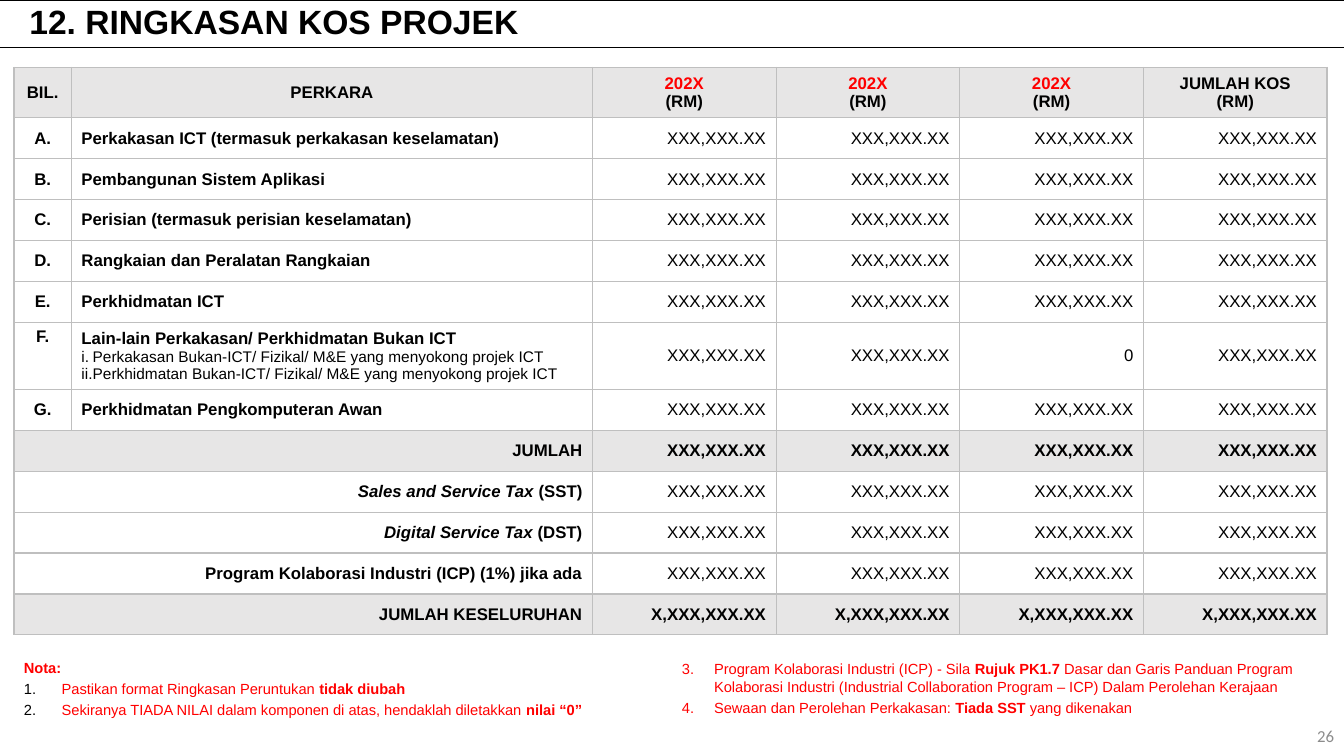
"""Build the project cost summary slide with its cost table and notes."""
from dataclasses import dataclass

from lxml.etree import SubElement
from pptx import Presentation
from pptx.dml.color import RGBColor
from pptx.enum.shapes import MSO_SHAPE
from pptx.enum.text import MSO_ANCHOR, PP_ALIGN
from pptx.oxml.ns import qn
from pptx.util import Pt


@dataclass(frozen=True)
class Theme:
    font: str = "Arial"
    number_font: str = "Calibri"
    black: str = "000000"
    red: str = "FF0000"
    gray: str = "8C8C8C"
    border: str = "BFBFBF"
    band: str = "E7E6E6"
    title_size: float = 24
    body_size: float = 12
    detail_size: float = 11
    note_size: float = 10.5


theme = Theme()


def write(paragraph, pieces, size, color=theme.black, bold=False, alignment=PP_ALIGN.LEFT):
    """Write alternating plain and emphasised pieces; emphasis is italic in bold text."""
    paragraph.alignment = alignment
    font = paragraph.font
    font.name, font.size, font.bold = theme.font, Pt(size), bold
    font.color.rgb = RGBColor.from_string(color)
    for index, piece in enumerate(pieces):
        if not piece:
            continue
        run = paragraph.add_run()
        run.text = piece
        run.font.name, run.font.size = theme.font, Pt(size)
        run.font.color.rgb = RGBColor.from_string(color)
        emphasised = index % 2 == 1
        run.font.bold = bold or emphasised
        run.font.italic = bold and emphasised


def number(paragraph, scheme, start, margin, color):
    """Give a paragraph an automatic number with a hanging indent."""
    properties = paragraph._p.get_or_add_pPr()
    properties.set("marL", str(Pt(margin)))
    properties.set("indent", str(-Pt(margin)))
    SubElement(SubElement(properties, qn("a:buClr")), qn("a:srgbClr"), val=color)
    SubElement(properties, qn("a:buAutoNum"), type=scheme, startAt=str(start))


presentation = Presentation()
presentation.slide_width, presentation.slide_height = Pt(960), Pt(540)
slide = presentation.slides.add_slide(presentation.slide_layouts[6])

title = slide.shapes.add_shape(MSO_SHAPE.RECTANGLE, Pt(0), Pt(0), Pt(961), Pt(34))
title.shadow.inherit = False
title.fill.background()
title.line.color.rgb = RGBColor.from_string(theme.black)
title.line.width = Pt(0.75)
title.text_frame.word_wrap = True
title.text_frame.vertical_anchor = MSO_ANCHOR.MIDDLE
title.text_frame.margin_left = Pt(21)
title_paragraph = title.text_frame.paragraphs[0]
title_paragraph.line_spacing = 0.9
write(title_paragraph, ["12. RINGKASAN KOS PROJEK"], theme.title_size, bold=True)

page_number = slide.shapes.add_textbox(Pt(744), Pt(511.2), Pt(216), Pt(28.8))
page_number.text_frame.word_wrap = True
page_number.text_frame.vertical_anchor = MSO_ANCHOR.MIDDLE
page_paragraph = page_number.text_frame.paragraphs[0]
page_paragraph.text = "26"
page_paragraph.alignment = PP_ALIGN.RIGHT
page_paragraph.font.name = theme.number_font
page_paragraph.font.size = Pt(theme.body_size)
page_paragraph.font.color.rgb = RGBColor.from_string(theme.gray)

amount, grand_amount = "XXX,XXX.XX", "X,XXX,XXX.XX"
headings = [["BIL."], ["PERKARA"], *[["202X", "(RM)"]] * 3, ["JUMLAH KOS", "(RM)"]]
items = [
    "Perkakasan ICT (termasuk perkakasan keselamatan)",
    "Pembangunan Sistem Aplikasi",
    "Perisian (termasuk perisian keselamatan)",
    "Rangkaian dan Peralatan Rangkaian",
    "Perkhidmatan ICT",
    "Lain-lain Perkakasan/ Perkhidmatan Bukan ICT",
    "Perkhidmatan Pengkomputeran Awan",
]
other_details = [
    "Perkakasan Bukan-ICT/ Fizikal/ M&E yang menyokong projek ICT",
    "Perkhidmatan Bukan-ICT/ Fizikal/ M&E yang menyokong projek ICT",
]
totals = [
    ["JUMLAH"],
    ["", "Sales and Service Tax ", "(SST)"],
    ["", "Digital Service Tax ", "(DST)"],
    ["Program Kolaborasi Industri (ICP) (1%) jika ada"],
    ["JUMLAH KESELURUHAN"],
]
column_widths = [41, 372.2] + [131.2] * 4
other_row, first_total = 6, len(items) + 1
row_heights = [34] + [29.2] * (len(items) + len(totals))
row_heights[other_row] = 45
last_row = len(row_heights) - 1
band_rows = {0, first_total, last_row}

table = slide.shapes.add_table(
    len(row_heights), len(column_widths), Pt(10), Pt(48.2), Pt(sum(column_widths)), Pt(sum(row_heights))
).table
table.first_row = table.horz_banding = False
for column, width in zip(table.columns, column_widths):
    column.width = Pt(width)

for row_index, height in enumerate(row_heights):
    table.rows[row_index].height = Pt(height)
    is_total = row_index >= first_total
    for column_index in range(len(column_widths)):
        cell = table.cell(row_index, column_index)
        cell.vertical_anchor = MSO_ANCHOR.MIDDLE
        open_side = {0: "lnR", 1: "lnL"}.get(column_index) if is_total else None
        for side in ("lnL", "lnR", "lnT", "lnB"):
            edge = SubElement(cell._tc.get_or_add_tcPr(), qn(f"a:{side}"), w=str(Pt(1)))
            if side == open_side:
                SubElement(edge, qn("a:noFill"))
            else:
                SubElement(SubElement(edge, qn("a:solidFill")), qn("a:srgbClr"), val=theme.border)
        if row_index in band_rows:
            cell.fill.solid()
            cell.fill.fore_color.rgb = RGBColor.from_string(theme.band)
        else:
            cell.fill.background()

        pieces, bold, alignment = [], True, PP_ALIGN.RIGHT
        if row_index == 0:
            pieces, alignment = headings[column_index][:1], PP_ALIGN.CENTER
        elif column_index > 1:
            pieces, bold = [grand_amount if row_index == last_row else amount], row_index in band_rows
            if (row_index, column_index) == (other_row, 4):
                pieces = ["0"]
        elif is_total and column_index == 1:
            pieces = totals[row_index - first_total]
        elif column_index == 1:
            pieces, alignment = [items[row_index - 1]], PP_ALIGN.LEFT
        elif not is_total:
            pieces, alignment = ["ABCDEFG"[row_index - 1] + "."], PP_ALIGN.CENTER
        color = theme.red if pieces == ["202X"] else theme.black
        write(cell.text_frame.paragraphs[0], pieces, theme.body_size, color, bold, alignment)

for column_index, lines in enumerate(headings):
    for line in lines[1:]:
        paragraph = table.cell(0, column_index).text_frame.add_paragraph()
        write(paragraph, [line], theme.body_size, bold=True, alignment=PP_ALIGN.CENTER)

table.cell(other_row, 0).vertical_anchor = MSO_ANCHOR.TOP
for detail in other_details:
    paragraph = table.cell(other_row, 1).text_frame.add_paragraph()
    number(paragraph, "romanLcPeriod", 1, 8, theme.black)
    write(paragraph, [detail], theme.detail_size, alignment=PP_ALIGN.JUSTIFY)

format_notes = [
    ["Pastikan format Ringkasan Peruntukan ", "tidak diubah"],
    ["Sekiranya TIADA NILAI dalam komponen di atas, hendaklah diletakkan ", "nilai “0”"],
]
tax_notes = [
    [
        "Program Kolaborasi Industri (ICP) - Sila ",
        "Rujuk PK1.7 ",
        "Dasar dan Garis Panduan Program Kolaborasi Industri "
        "(Industrial Collaboration Program – ICP) Dalam Perolehan Kerajaan",
    ],
    ["Sewaan dan Perolehan Perkakasan: ", "Tiada SST ", "yang dikenakan"],
]
notes_group = slide.shapes.add_group_shape()
for left, top, width, heading, notes, start, margin, number_color in [
    (10, 467.3, 470, "Nota:", format_notes, 1, 27, theme.black),
    (480, 468, 462.2, None, tax_notes, 3, 23, theme.red),
]:
    frame = notes_group.shapes.add_textbox(Pt(left), Pt(top), Pt(width), Pt(39.6)).text_frame
    frame.word_wrap = True
    if heading:
        write(frame.paragraphs[0], [heading], theme.note_size, theme.red, bold=True)
    for index, note in enumerate(notes):
        is_first = index == 0 and not heading
        paragraph = frame.paragraphs[0] if is_first else frame.add_paragraph()
        number(paragraph, "arabicPeriod", start, margin, number_color)
        paragraph.space_before = Pt(0 if is_first else 2.4)
        write(paragraph, note, theme.note_size, theme.red)

presentation.save("out.pptx")
